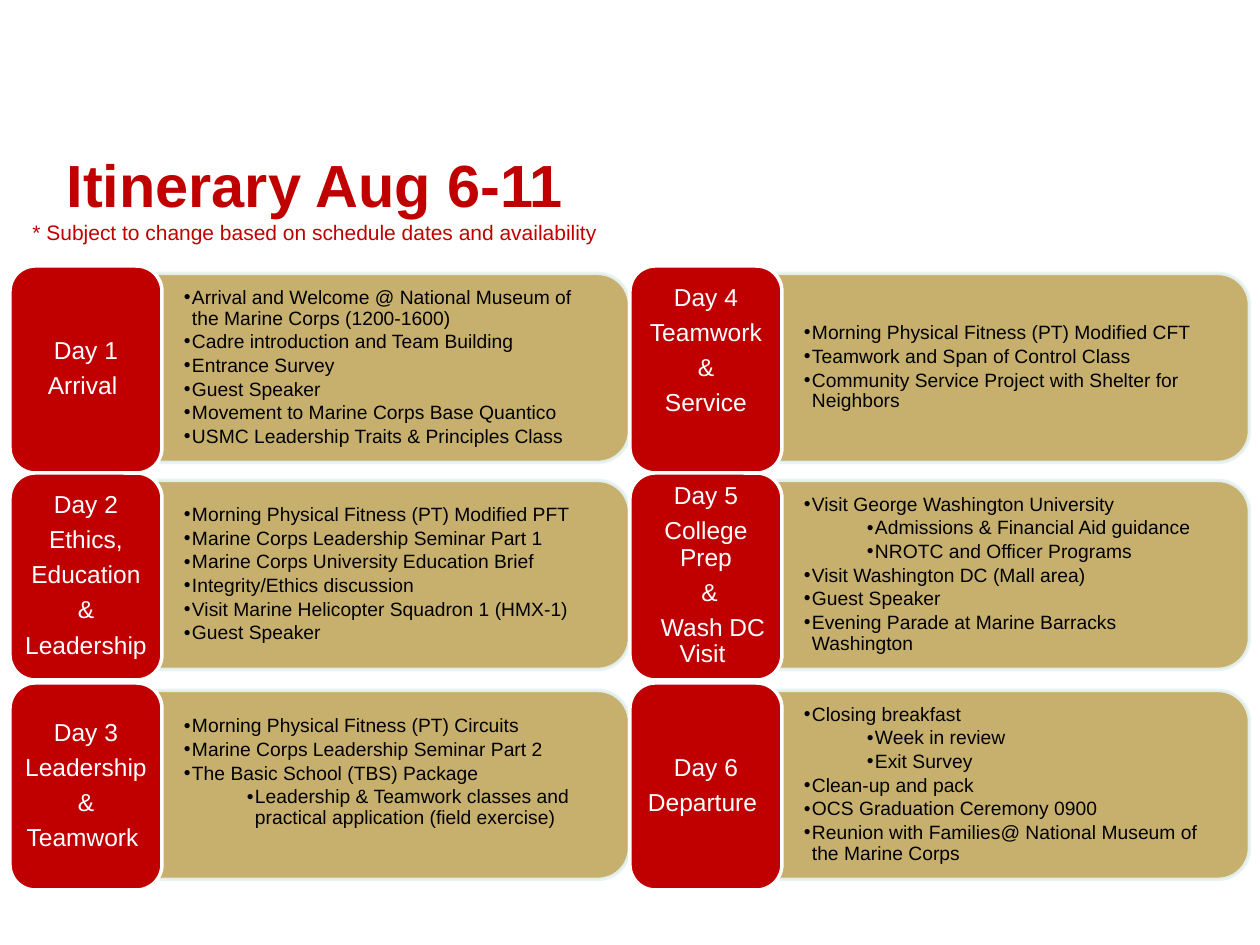
from typing import NamedTuple

from lxml.etree import SubElement
from pptx import Presentation
from pptx.dml.color import RGBColor
from pptx.enum.shapes import MSO_SHAPE as Preset
from pptx.enum.text import MSO_ANCHOR as Anchor, PP_ALIGN as Align
from pptx.oxml.ns import qn
from pptx.util import Emu, Pt

SCALE = 914400 // 126
RED = RGBColor(0xC0, 0x00, 0x00)
GOLD = RGBColor(0xC2, 0xA8, 0x5E)
PALE = RGBColor(0xE7, 0xF3, 0xF4)
WHITE = RGBColor(0xFF, 0xFF, 0xFF)
BLACK = RGBColor(0x00, 0x00, 0x00)

FONT = "Arial"
COLUMN_STEP = 620
ROW_TOPS = (266, 473, 683)
TAG_LEFT, TAG_WIDTH, TAG_HEIGHT = 10, 152, 207
PANEL_LEFT, PANEL_WIDTH, PANEL_HEIGHT = 150, 480, 189
BULLET_HANG = 8


class Box(NamedTuple):
    left: int
    top: int
    width: int
    height: int


class Line(NamedTuple):
    text: str
    margin: int = 0
    indent: int = 0


class Style(NamedTuple):
    size: float
    color: RGBColor
    bold: bool = False
    align: Align = Align.CENTER
    line_spacing: float = 0.9
    space_after: float = 0
    bullet: bool = False


class Day(NamedTuple):
    column: int
    row: int
    heading: list[Line]
    items: list[Line]
    heading_lift: int = 0
    items_lift: int = 0


def item(text: str) -> Line:
    return Line(text, BULLET_HANG, -BULLET_HANG)


def sub_item(text: str) -> Line:
    return Line(text, 63 + BULLET_HANG, -BULLET_HANG)


TITLE_STYLE = Style(34, RED, bold=True, line_spacing=1.0)
NOTE_STYLE = Style(12, RED, line_spacing=1.0)
TAG_STYLE = Style(14, WHITE, space_after=4.9)
ITEM_STYLE = Style(11, BLACK, align=Align.LEFT, space_after=1.65, bullet=True)

DAYS = [
    Day(0, 0, [Line("Day 1"), Line("Arrival ")], [
        item("Arrival and Welcome @ National Museum of the Marine Corps (1200-1600)"),
        item("Cadre introduction and Team Building"),
        item("Entrance Survey"),
        item("Guest Speaker"),
        item("Movement to Marine Corps Base Quantico"),
        item("USMC Leadership Traits & Principles Class")]),
    Day(1, 0, [Line("Day 4"), Line("Teamwork"), Line("&"), Line("Service")], [
        item("Morning Physical Fitness (PT) Modified CFT"),
        item("Teamwork and Span of Control Class"),
        item("Community Service Project with Shelter for Neighbors")],
        heading_lift=35),
    Day(0, 1, [Line("Day 2"), Line("Ethics,"), Line("Education"), Line("&"),
               Line("Leadership")], [
        item("Morning Physical Fitness (PT) Modified PFT"),
        item("Marine Corps Leadership Seminar Part 1"),
        item("Marine Corps University Education Brief"),
        item("Integrity/Ethics discussion"),
        item("Visit Marine Helicopter Squadron 1 (HMX-1)"),
        item("Guest Speaker")]),
    Day(1, 1, [Line("Day 5"), Line("College Prep"), Line("&", indent=7),
               Line("Wash DC Visit ", indent=14)], [
        item("Visit George Washington University"),
        sub_item("Admissions & Financial Aid guidance"),
        sub_item("NROTC and Officer Programs"),
        item("Visit Washington DC (Mall area)"),
        item("Guest Speaker"),
        item("Evening Parade at Marine Barracks Washington")]),
    Day(0, 2, [Line("Day 3"), Line("Leadership"), Line("&"), Line("Teamwork ")], [
        item("Morning Physical Fitness (PT) Circuits"),
        item("Marine Corps Leadership Seminar Part 2"),
        item("The Basic School (TBS) Package"),
        sub_item("Leadership & Teamwork classes and practical application (field exercise)")],
        items_lift=24),
    Day(1, 2, [Line("Day 6"), Line("Departure ")], [
        item("Closing breakfast"),
        sub_item("Week in review"),
        sub_item("Exit Survey"),
        item("Clean-up and pack"),
        item("OCS Graduation Ceremony 0900"),
        item("Reunion with Families@ National Museum of the Marine Corps")]),
]


def px(length: int) -> Emu:
    return Emu(length * SCALE)


def add_block(page, preset: Preset, box: Box, fill: RGBColor, line: RGBColor):
    block = page.shapes.add_shape(preset, *map(px, box))
    block.shadow.inherit = False
    block.fill.solid()
    block.fill.fore_color.rgb = fill
    block.line.color.rgb = line
    block.line.width = Pt(2)
    return block


def add_panel(page, box: Box) -> None:
    """Draw a slightly transparent panel whose right corners are rounded."""
    turned = Box(box.left + (box.width - box.height) // 2,
                 box.top + (box.height - box.width) // 2, box.height, box.width)
    panel = add_block(page, Preset.ROUND_2_SAME_RECTANGLE, turned, GOLD, PALE)
    panel.rotation = 90
    for color in panel._element.spPr.iter(qn("a:srgbClr")):
        SubElement(color, qn("a:alpha"), val="90000")


def add_text(page, box: Box, lines: list[tuple[Line, Style]],
             inset: tuple[int, int], lift: int = 0) -> None:
    """Write middle-anchored lines; lift is extra room kept below them."""
    frame = page.shapes.add_textbox(*map(px, box)).text_frame
    across, down = inset
    settings = {"word_wrap": True, "vertical_anchor": Anchor.MIDDLE,
                "margin_left": px(across), "margin_right": px(across),
                "margin_top": px(down), "margin_bottom": px(down + lift)}
    for name, value in settings.items():
        setattr(frame, name, value)
    for number, (line, style) in enumerate(lines):
        para = frame.paragraphs[0] if number == 0 else frame.add_paragraph()
        properties = para._p.get_or_add_pPr()
        properties.set("marL", str(px(line.margin)))
        properties.set("indent", str(px(line.indent)))
        if style.bullet:
            SubElement(properties, qn("a:buFont"), typeface=FONT)
            SubElement(properties, qn("a:buChar"), char="•")
        para.alignment = style.align
        para.line_spacing = style.line_spacing
        para.space_after = Pt(style.space_after)
        span = para.add_run()
        span.text = line.text
        for name, value in {"name": FONT, "size": Pt(style.size),
                            "bold": style.bold}.items():
            setattr(span.font, name, value)
        span.font.color.rgb = style.color


def add_day(page, day: Day) -> None:
    shift, top = day.column * COLUMN_STEP, ROW_TOPS[day.row]
    panel = Box(PANEL_LEFT + shift, top + 8, PANEL_WIDTH, PANEL_HEIGHT)
    add_panel(page, panel)
    add_text(page, Box(panel.left, top + 16, 473, 171),
             [(line, ITEM_STYLE) for line in day.items], (34, 18), day.items_lift)
    tag = Box(TAG_LEFT + shift, top, TAG_WIDTH, TAG_HEIGHT)
    add_block(page, Preset.ROUNDED_RECTANGLE, tag, RED, WHITE)
    add_text(page, Box(tag.left + 7, top + 8, 138, 190),
             [(line, TAG_STYLE) for line in day.heading], (7, 4), day.heading_lift)


def main() -> None:
    deck = Presentation()
    deck.slide_width, deck.slide_height = px(1260), px(945)
    page = deck.slides.add_slide(deck.slide_layouts[6])
    add_text(page, Box(0, 135, 630, 123), [
        (Line("Itinerary Aug 6-11"), TITLE_STYLE),
        (Line("* Subject to change based on schedule dates and availability"), NOTE_STYLE),
    ], (13, 13))
    for day in DAYS:
        add_day(page, day)
    deck.save("out.pptx")


if __name__ == "__main__":
    main()
